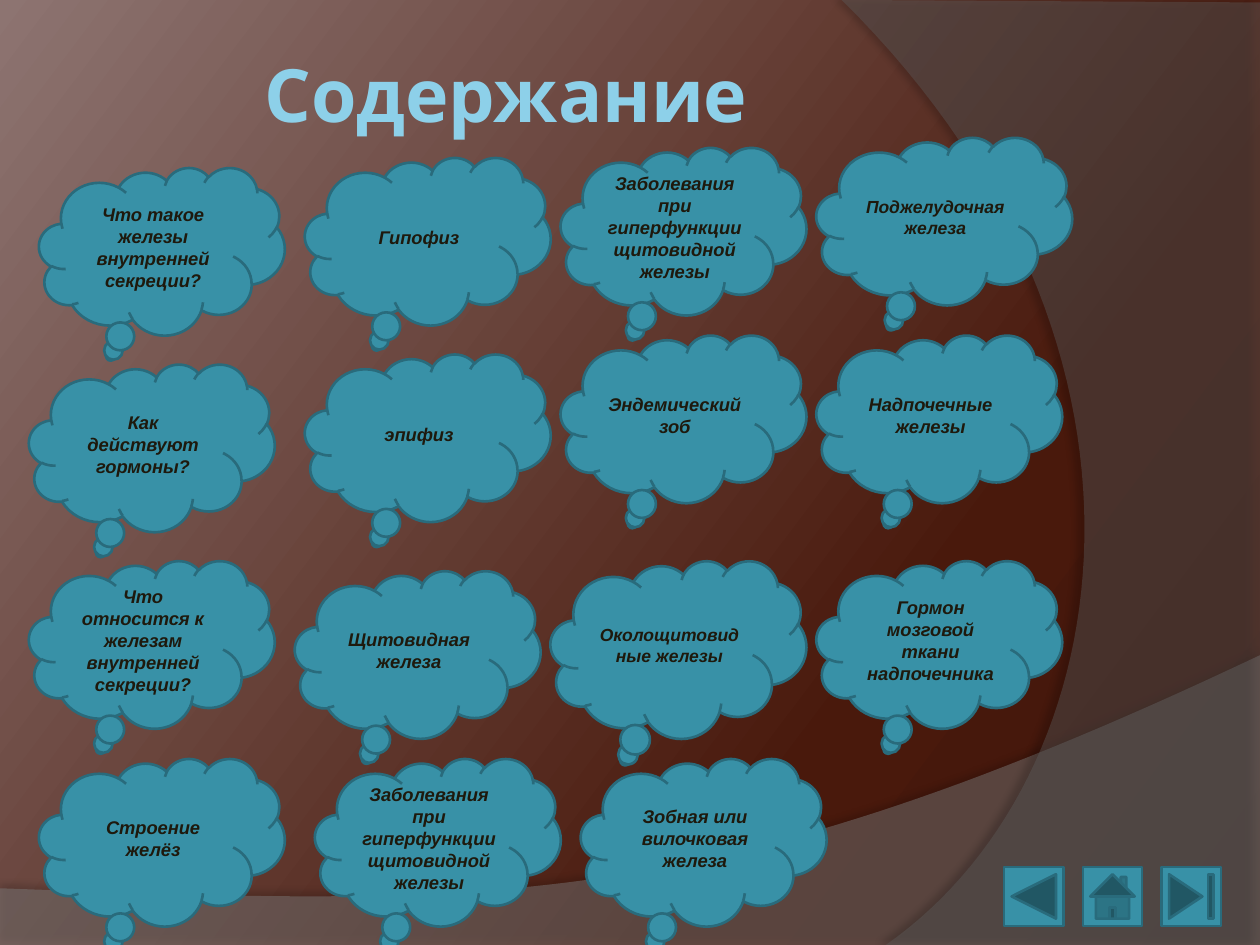
from dataclasses import dataclass

from lxml import etree
from pptx import Presentation
from pptx.dml.color import RGBColor
from pptx.enum.shapes import MSO_SHAPE
from pptx.enum.text import MSO_ANCHOR, MSO_AUTO_SIZE, PP_ALIGN
from pptx.oxml import parse_xml
from pptx.oxml.ns import qn
from pptx.util import Inches, Pt

CLOUD = MSO_SHAPE.CLOUD_CALLOUT
BUTTONS = (MSO_SHAPE.ACTION_BUTTON_BACK_OR_PREVIOUS,
           MSO_SHAPE.ACTION_BUTTON_HOME,
           MSO_SHAPE.ACTION_BUTTON_END)
TOP, MIDDLE = MSO_ANCHOR.TOP, MSO_ANCHOR.MIDDLE
CENTER = PP_ALIGN.CENTER
NO_AUTOFIT = MSO_AUTO_SIZE.NONE
A_NS = 'xmlns:a="http://schemas.openxmlformats.org/drawingml/2006/main"'


@dataclass(frozen=True)
class Theme:
    background: tuple = ((0, "3E150A"), (30, "49190C"), (100, "8D7471"))
    title_fill: tuple = ((0, "8DD0E9"), (9, "8DD0E9"), (53, "2D7486"),
                         (90, "8DD0E9"), (100, "8DD0E9"))
    title_outline: str = "42CEFF"
    fill: RGBColor = RGBColor(0x38, 0x91, 0xA7)
    line: RGBColor = RGBColor(0x29, 0x6B, 0x7C)
    text: RGBColor = RGBColor(0x1E, 0x19, 0x0D)
    title_font: str = "Cabin"
    body_font: str = "Arial"
    title_size: float = 42
    body_size: float = 10.5
    small_size: float = 10
    line_width: float = 1.5


theme = Theme()


def gradient(stops, angle):
    """Linear gradient fill; the angle runs clockwise in degrees."""
    marks = "".join(f'<a:gs pos="{pos * 1000}"><a:srgbClr val="{color}"/></a:gs>'
                    for pos, color in stops)
    return parse_xml(f'<a:gradFill {A_NS} rotWithShape="1"><a:gsLst>{marks}</a:gsLst>'
                     f'<a:lin ang="{angle * 60000}" scaled="0"/></a:gradFill>')


def add_preset(preset, left, top, width, height):
    """Teal preset shape with the common outline."""
    shape = slide.shapes.add_shape(preset, Inches(left), Inches(top),
                                   Inches(width), Inches(height))
    shape.shadow.inherit = False
    shape.fill.solid()
    shape.fill.fore_color.rgb = theme.fill
    shape.line.color.rgb = theme.line
    shape.line.width = Pt(theme.line_width)
    return shape


prs = Presentation()
prs.slide_width, prs.slide_height = Inches(10), Inches(7.5)
slide = prs.slides.add_slide(prs.slide_layouts[5])

# Background gradient
background = slide.background.fill
background.gradient()
bg_props = slide.element.find(".//" + qn("p:bgPr"))
bg_props.replace(bg_props.find(qn("a:gradFill")), gradient(theme.background, 217))

# Translucent waves: corners before the curve, its four control points,
# corners after it, then colour, opacity, shadow opacity, distance, direction
waves = [
    ([(0, 7.05), (0, 7.51), (10, 7.51)],
     [(10, 5.2), (5.59, 7.29), (3.91, 7.19), (0, 7.05)], [],
     "7F7F7F", 45, 35, 3.5, 270),
    ([(10, 0.02), (10, 7.5)],
     [(7.03, 7.5), (8.91, 6.19), (9.47, 2.75), (6.68, 0)], [(10, 0.02)],
     "5E5E5E", 40, 45, 4, 180),
]
CURVE_STEPS = 60
for before, controls, after, color, opacity, shade, distance, direction in waves:
    curve = []
    for step in range(CURVE_STEPS + 1):
        t = step / CURVE_STEPS
        weights = ((1 - t) ** 3, 3 * t * (1 - t) ** 2, 3 * t ** 2 * (1 - t), t ** 3)
        curve.append(tuple(sum(w * point[axis] for w, point in zip(weights, controls))
                           for axis in (0, 1)))
    outline = [(Inches(x), Inches(y)) for x, y in before + curve + after]
    builder = slide.shapes.build_freeform(*outline[0])
    builder.add_line_segments(outline[1:], close=True)
    wave = builder.convert_to_shape()
    wave.fill.solid()
    wave.fill.fore_color.rgb = RGBColor.from_string(color)
    wave_color = wave.element.spPr.find(qn("a:solidFill"))[0]
    etree.SubElement(wave_color, qn("a:alpha"), val=str(opacity * 1000))
    wave.line.fill.background()
    wave.element.spPr.append(parse_xml(
        f'<a:effectLst {A_NS}><a:outerShdw blurRad="{Pt(4)}" dist="{Pt(distance)}" '
        f'dir="{direction * 60000}" algn="ctr" rotWithShape="0"><a:srgbClr val="000000">'
        f'<a:alpha val="{shade * 1000}"/></a:srgbClr></a:outerShdw></a:effectLst>'))

# Title, brought in front of the waves
title = slide.shapes.title
slide.shapes.element.append(title.element)
title.left, title.top = Inches(0.39), Inches(0.39)
title.width, title.height = Inches(7.25), Inches(2)
frame = title.text_frame
frame.auto_size = NO_AUTOFIT
frame.word_wrap = True
frame.vertical_anchor = TOP
frame.margin_left = frame.margin_right = Inches(0.05)
frame.margin_top = frame.margin_bottom = 0
heading = frame.paragraphs[0]
heading.alignment = CENTER
run = heading.add_run()
run.text = "Содержание"
run.font.name = theme.title_font
run.font.size = Pt(theme.title_size)
run.font.bold = True
run_props = run.font.fill and run.text and heading.runs[0].font
title_props = title.element.find(".//" + qn("a:rPr"))
title_props.insert(0, gradient(theme.title_fill, 90))
title_props.insert(0, parse_xml(
    f'<a:ln {A_NS} w="{Pt(0.39)}"><a:solidFill><a:srgbClr val="{theme.title_outline}"/>'
    '</a:solidFill></a:ln>'))

# Topic clouds, column by column: left, top, topic
CLOUD_SIZE = (1.95, 1.33)
topics = [
    (0.31, 1.33, "Что такое железы внутренней секреции?"),
    (0.23, 2.89, "Как действуют гормоны?"),
    (0.23, 4.45, "Что относится к железам внутренней секреции?"),
    (0.31, 6.02, "Строение желёз"),
    (2.42, 1.25, "Гипофиз"),
    (2.42, 2.81, "эпифиз"),
    (2.34, 4.53, "Щитовидная железа"),
    (2.5, 6.02, "Заболевания при гиперфункции щитовидной железы"),
    (4.45, 1.17, "Заболевания при гиперфункции щитовидной железы"),
    (4.45, 2.66, "Эндемический зоб"),
    (4.37, 4.45, "Околощитовидные железы"),
    (4.61, 6.02, "Зобная или вилочковая железа"),
    (6.48, 1.09, "Поджелудочная железа"),
    (6.48, 2.66, "Надпочечные железы"),
    (6.48, 4.45, "Гормон мозговой ткани надпочечника"),
]
# Long words get a wider cloud and smaller type
wide_clouds = {"Поджелудочная железа": (2.03, 1.33),
               "Околощитовидные железы": (2.03, 1.41)}
for left, top, topic in topics:
    cloud = add_preset(CLOUD, left, top, *wide_clouds.get(topic, CLOUD_SIZE))
    cloud.text_frame.word_wrap = True
    cloud.text_frame.vertical_anchor = MIDDLE
    label = cloud.text_frame.paragraphs[0]
    label.alignment = CENTER
    run = label.add_run()
    run.text = topic
    run.font.name = theme.body_font
    run.font.size = Pt(theme.small_size if topic in wide_clouds else theme.body_size)
    run.font.bold = run.font.italic = True
    run.font.color.rgb = theme.text

# Navigation buttons
for index, button in enumerate(BUTTONS):
    add_preset(button, 7.97 + index * 0.625, 6.88, 0.47, 0.47)

prs.save("out.pptx")
